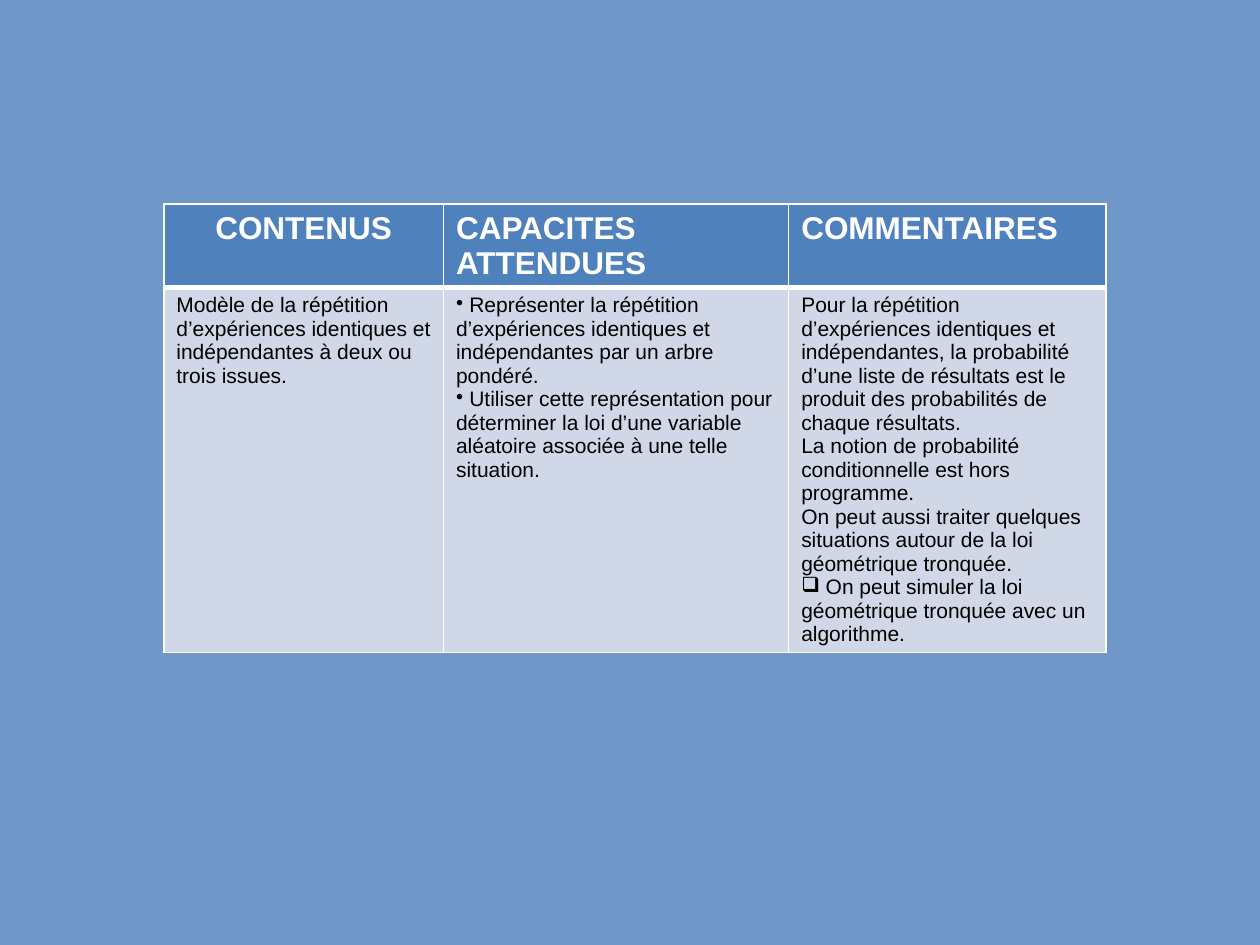
from dataclasses import dataclass

from lxml.etree import SubElement
from pptx import Presentation
from pptx.dml.color import RGBColor as RGB
from pptx.enum.text import PP_ALIGN as Align
from pptx.oxml.ns import qn
from pptx.util import Pt


@dataclass(frozen=True)
class Theme:
    font: str = "Arial"
    background: str = "6F98C9"
    header_fill: str = "4F81BD"
    header_text: str = "FFFFFF"
    body_fill: str = "D0D8E8"
    body_text: str = "000000"
    border: str = "FFFFFF"
    header_size: int = 18
    body_size: int = 12
    thin: int = 1
    thick: int = 3


THEME = Theme()

COLUMN_WIDTHS = [159.84, 197.28, 181.44]
ROW_HEIGHT = 29.52
HEADERS = [
    ("CONTENUS", Align.CENTER),
    ("CAPACITES ATTENDUES", Align.LEFT),
    ("COMMENTAIRES", Align.LEFT),
]
# Each paragraph is (bullet, text); the bullet is empty for plain text.
PROGRAMME = [
    [("", "Modèle de la répétition d’expériences identiques et indépendantes "
          "à deux ou trois issues.")],
    [("•", " Représenter la répétition d’expériences identiques et "
           "indépendantes par un arbre pondéré."),
     ("•", " Utiliser cette représentation pour déterminer la loi d’une "
           "variable aléatoire associée à une telle situation.")],
    [("", "Pour la répétition d’expériences identiques et indépendantes, la "
          "probabilité d’une liste de résultats est le produit des "
          "probabilités de chaque résultats."),
     ("", "La notion de probabilité conditionnelle est hors programme."),
     ("", "On peut aussi traiter quelques situations autour de la loi "
          "géométrique tronquée."),
     ("❑", " On peut simuler la loi géométrique tronquée avec un algorithme.")],
]


def paint(fill, color):
    fill.solid()
    fill.fore_color.rgb = RGB.from_string(color)


def set_borders(cell, **widths):
    """Draw the cell's sides; widths overrides the thin line by side (T, B)."""
    properties = cell._tc.get_or_add_tcPr()
    for position, side in enumerate("LRTB"):
        width = Pt(widths.get(side, THEME.thin))
        line = SubElement(properties, qn(f"a:ln{side}"), w=str(width))
        color = SubElement(SubElement(line, qn("a:solidFill")), qn("a:srgbClr"))
        color.set("val", THEME.border)
        properties.insert(position, line)


def set_bullet(paragraph, symbol):
    """Put the bullet directly before the text, without a hanging indent."""
    properties = paragraph._p.get_or_add_pPr()
    properties.set("marL", "0")
    properties.set("indent", "0")
    SubElement(properties, qn("a:buFontTx"))
    SubElement(properties, qn("a:buChar"), char=symbol)


def write_paragraph(paragraph, text, color, align=Align.LEFT, **font_format):
    paragraph.alignment = align
    run = paragraph.add_run()
    run.text = text
    for name, value in {"name": THEME.font, **font_format}.items():
        setattr(run.font, name, value)
    run.font.color.rgb = RGB.from_string(color)


def fill_header(cell, title, align):
    paint(cell.fill, THEME.header_fill)
    set_borders(cell, B=THEME.thick)
    write_paragraph(cell.text_frame.paragraphs[0], title, THEME.header_text,
                    align, size=Pt(THEME.header_size), bold=True)


def fill_body(cell, entries):
    paint(cell.fill, THEME.body_fill)
    set_borders(cell, T=THEME.thick)
    frame = cell.text_frame
    for index, (bullet, text) in enumerate(entries):
        paragraph = frame.add_paragraph() if index else frame.paragraphs[0]
        write_paragraph(paragraph, text, THEME.body_text,
                        size=Pt(THEME.body_size), bold=False)
        if bullet:
            set_bullet(paragraph, bullet)


def add_programme_table(slide):
    table = slide.shapes.add_table(
        2, len(COLUMN_WIDTHS), Pt(93.6), Pt(116.64),
        Pt(sum(COLUMN_WIDTHS)), Pt(238.32)).table
    for column, width in zip(table.columns, COLUMN_WIDTHS):
        column.width = Pt(width)
    for row in table.rows:
        row.height = Pt(ROW_HEIGHT)  # rows grow to fit their text
    for index, ((title, align), entries) in enumerate(zip(HEADERS, PROGRAMME)):
        fill_header(table.cell(0, index), title, align)
        fill_body(table.cell(1, index), entries)


def main():
    deck = Presentation()
    deck.slide_width, deck.slide_height = Pt(720), Pt(540)
    slide = deck.slides.add_slide(deck.slide_layouts[6])
    paint(slide.background.fill, THEME.background)
    add_programme_table(slide)
    deck.save("out.pptx")


if __name__ == "__main__":
    main()
